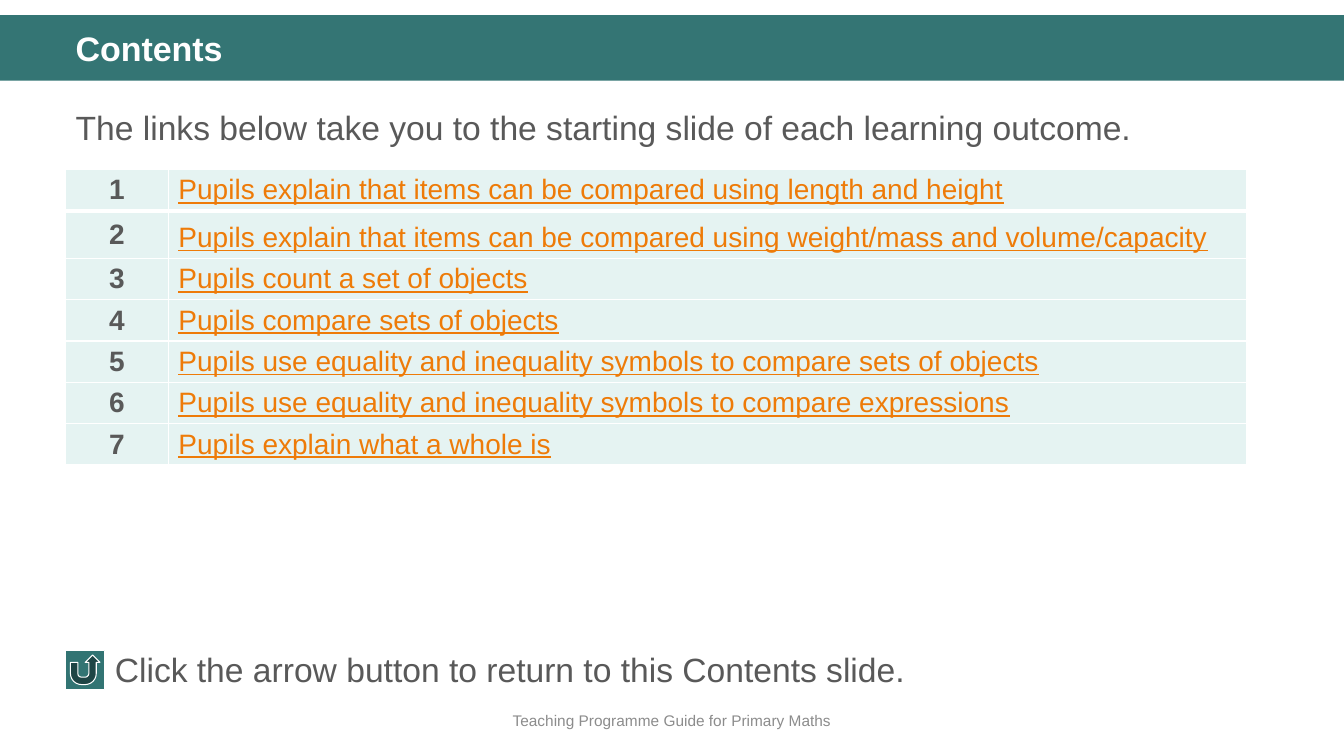
from lxml.etree import SubElement
from pptx import Presentation
from pptx.dml.color import RGBColor
from pptx.enum.shapes import MSO_SHAPE
from pptx.enum.text import MSO_ANCHOR, MSO_AUTO_SIZE, PP_ALIGN
from pptx.oxml.ns import qn
from pptx.util import Inches, Pt

WHITE = RGBColor(0xFF, 0xFF, 0xFF)
BAND_TEAL = RGBColor(0x34, 0x75, 0x74)
BUTTON_TEAL = RGBColor(0x32, 0x74, 0x73)
PALE_TEAL = RGBColor(0xE5, 0xF3, 0xF2)
TEXT_GREY = RGBColor(0x59, 0x59, 0x59)
FOOTER_GREY = RGBColor(0x8C, 0x8C, 0x8C)
LINK_ORANGE = RGBColor(0xEE, 0x7B, 0x08)

SLIDE_WIDTH, SLIDE_HEIGHT = Inches(13.33), Inches(7.5)
MARGIN = Inches(0.65)
TEXT_WIDTH = Inches(12.18)
NUMBER_COLUMN, OUTCOME_COLUMN = Inches(1.02), Inches(10.69)
TABLE_WIDTH = NUMBER_COLUMN + OUTCOME_COLUMN
ROW_HEIGHT = Inches(0.41)
BUTTON_SIZE = Inches(0.39)

OUTCOMES = [
    "Pupils explain that items can be compared using length and height",
    "Pupils explain that items can be compared using weight/mass and volume/capacity",
    "Pupils count a set of objects",
    "Pupils compare sets of objects",
    "Pupils use equality and inequality symbols to compare sets of objects",
    "Pupils use equality and inequality symbols to compare expressions",
    "Pupils explain what a whole is",
]
SPACED_ROW = 1


def write(text_frame, text, size, color, bold=False, underline=False,
          align=PP_ALIGN.LEFT, spacing=1.0):
    paragraph = text_frame.paragraphs[0]
    paragraph.text = text
    paragraph.alignment = align
    paragraph.line_spacing = spacing
    paragraph.space_before = Pt(0)
    font = paragraph.font
    font.name, font.size, font.bold = "Arial", Pt(size), bold
    font.underline = underline
    font.color.rgb = color


def place(shape, left, top, width, height):
    shape.left, shape.top, shape.width, shape.height = left, top, width, height


def fill_placeholder(placeholder, top, height, text, size, color, bold, spacing):
    place(placeholder, MARGIN, top, TEXT_WIDTH, height)
    text_frame = placeholder.text_frame
    text_frame.auto_size = MSO_AUTO_SIZE.NONE
    text_frame.vertical_anchor = MSO_ANCHOR.TOP
    properties = text_frame.paragraphs[0]._p.get_or_add_pPr()
    properties.set("marL", "0")
    properties.set("indent", "0")
    SubElement(properties, qn("a:buNone"))
    write(text_frame, text, size, color, bold, spacing=spacing)


def add_solid_shape(slide, preset, left, top, width, height, color):
    shape = slide.shapes.add_shape(preset, left, top, width, height)
    shape.shadow.inherit = False
    shape.fill.solid()
    shape.fill.fore_color.rgb = color
    shape.line.fill.background()
    return shape


def add_text(slide, left, top, width, height, text, size, color,
             align=PP_ALIGN.LEFT, anchor=MSO_ANCHOR.TOP):
    text_frame = slide.shapes.add_textbox(left, top, width, height).text_frame
    text_frame.word_wrap = True
    text_frame.vertical_anchor = anchor
    write(text_frame, text, size, color, align=align)


def set_border(cell, side, width):
    line = SubElement(cell._tc.get_or_add_tcPr(), qn(f"a:{side}"), w=str(Pt(width)))
    fill = SubElement(line, qn("a:solidFill"))
    SubElement(fill, qn("a:srgbClr"), val=str(WHITE))


def format_cell(cell, row, text, **text_format):
    cell.vertical_anchor = MSO_ANCHOR.MIDDLE
    write(cell.text_frame, text, 20, **text_format)
    for side in ("lnL", "lnR", "lnT", "lnB"):
        thick = (row, side) in ((0, "lnB"), (1, "lnT"))
        set_border(cell, side, 3 if thick else 1)
    cell.fill.solid()
    cell.fill.fore_color.rgb = PALE_TEAL


def add_outcome_table(slide):
    table = slide.shapes.add_table(
        len(OUTCOMES), 2, MARGIN, Inches(1.68), TABLE_WIDTH,
        ROW_HEIGHT * len(OUTCOMES)).table
    table.first_row = table.horz_banding = False
    table.columns[0].width = NUMBER_COLUMN
    table.columns[1].width = OUTCOME_COLUMN
    for row, outcome in enumerate(OUTCOMES):
        table.rows[row].height = ROW_HEIGHT
        format_cell(table.cell(row, 0), row, str(row + 1), color=TEXT_GREY,
                    bold=True, align=PP_ALIGN.CENTER)
        format_cell(table.cell(row, 1), row, outcome, color=LINK_ORANGE,
                    underline=True, spacing=1.2 if row == SPACED_ROW else 1.0)


def main():
    presentation = Presentation()
    presentation.slide_width, presentation.slide_height = SLIDE_WIDTH, SLIDE_HEIGHT
    slide = presentation.slides.add_slide(presentation.slide_layouts[1])
    title, body = slide.placeholders

    band = add_solid_shape(slide, MSO_SHAPE.RECTANGLE, 0, Inches(0.15),
                           SLIDE_WIDTH, Inches(0.65), BAND_TEAL)
    title._element.addprevious(band._element)
    fill_placeholder(title, Inches(0.27), Inches(0.47), "Contents",
                     24.3, WHITE, True, 0.9)
    fill_placeholder(
        body, Inches(0.93), Inches(3.51),
        "The links below take you to the starting slide of each learning outcome.",
        24, TEXT_GREY, False, 1.2)
    add_outcome_table(slide)

    button = add_solid_shape(slide, MSO_SHAPE.ACTION_BUTTON_RETURN, MARGIN,
                             Inches(6.45), BUTTON_SIZE, BUTTON_SIZE, BUTTON_TEAL)
    button.line.color.rgb = WHITE
    button.line.width = Pt(0.75)
    add_text(slide, MARGIN + BUTTON_SIZE, Inches(6.39), TABLE_WIDTH - BUTTON_SIZE,
             Inches(0.5), "Click the arrow button to return to this Contents slide.",
             24, TEXT_GREY)
    add_text(slide, 0, Inches(6.95), SLIDE_WIDTH, Inches(0.4),
             "Teaching Programme Guide for Primary Maths", 11, FOOTER_GREY,
             PP_ALIGN.CENTER, MSO_ANCHOR.MIDDLE)
    presentation.save("out.pptx")


if __name__ == "__main__":
    main()
